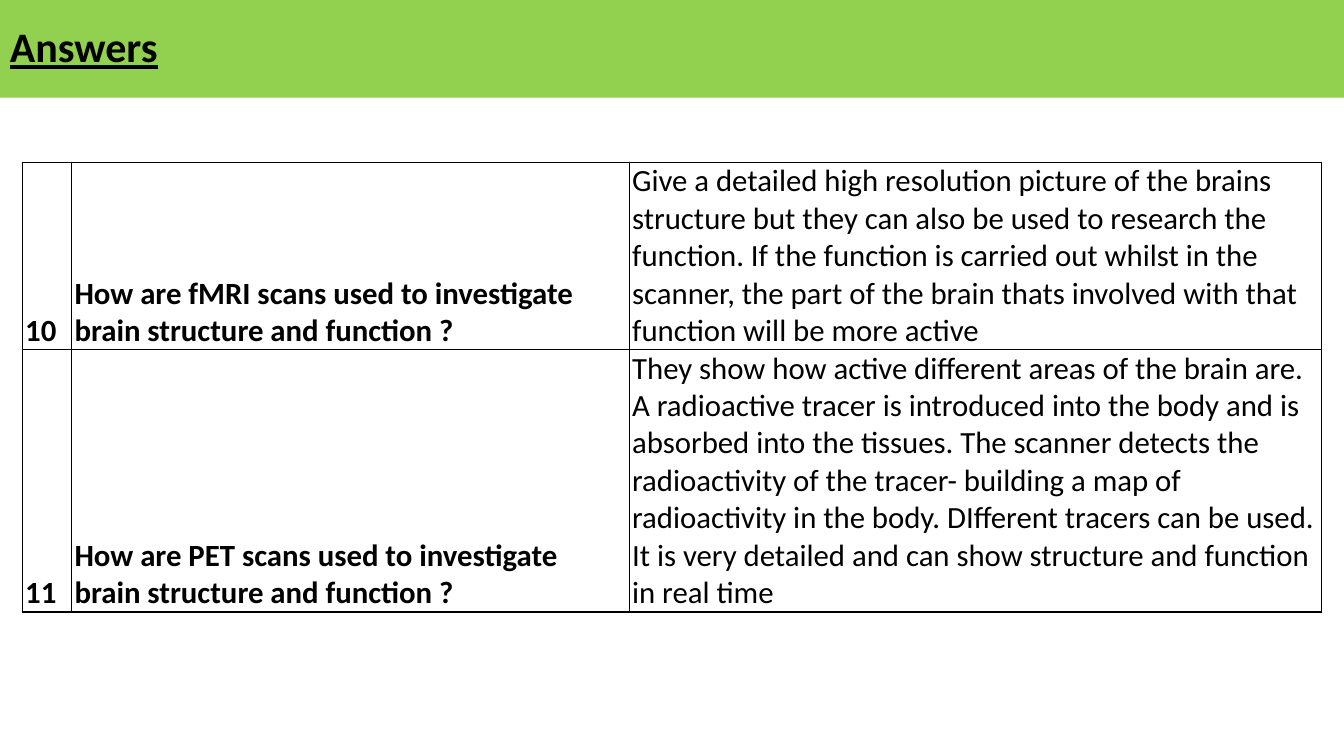
import pptx
import pptx.dml.color
import pptx.enum.shapes
import pptx.enum.text
import pptx.oxml
import pptx.oxml.ns
import pptx.util

Inches = pptx.util.Inches
MIDDLE = pptx.enum.text.MSO_ANCHOR.MIDDLE
BOTTOM = pptx.enum.text.MSO_ANCHOR.BOTTOM


def color(value):
    return pptx.dml.color.RGBColor.from_string(value)


def write(para, text, **format_values):
    span = para.add_run()
    span.text = text
    span.font.name = "Calibri"
    span.font.color.rgb = color("000000")
    for name, value in format_values.items():
        setattr(span.font, name, value)


deck = pptx.Presentation()
deck.slide_width, deck.slide_height = Inches(13.33), Inches(7.5)
page = deck.slides.add_slide(deck.slide_layouts[6])

# Title band
band = page.shapes.add_shape(
    pptx.enum.shapes.MSO_SHAPE.RECTANGLE, 0, 0, deck.slide_width, Inches(0.97))
band.shadow.inherit = False
band.fill.solid()
band.fill.fore_color.rgb = color("92D050")
band.line.fill.background()
band.text_frame.word_wrap = True
band.text_frame.vertical_anchor = MIDDLE
para = band.text_frame.paragraphs[0]
para.alignment = pptx.enum.text.PP_ALIGN.LEFT
para.line_spacing = 0.9
write(para, "Answers", size=pptx.util.Pt(30), bold=True, underline=True)

# Questions and answers
answers = [
    ("10", "How are fMRI scans used to investigate brain structure and function ?",
     "Give a detailed high resolution picture of the brains structure but they can "
     "also be used to research the function. If the function is carried out whilst "
     "in the scanner, the part of the brain thats involved with that function will "
     "be more active"),
    ("11", "How are PET scans used to investigate brain structure and function ?",
     "They show how active different areas of the brain are. A radioactive tracer is "
     "introduced into the body and is absorbed into the tissues. The scanner detects "
     "the radioactivity of the tracer- building a map of radioactivity in the body. "
     "DIfferent tracers can be used. It is very detailed and can show structure and "
     "function in real time"),
]
column_widths = [0.49, 5.53, 6.87]
row_heights = [1.86, 2.6]
table = page.shapes.add_table(
    len(answers), len(column_widths), Inches(0.22), Inches(1.61),
    Inches(sum(column_widths)), Inches(sum(row_heights))).table
table.first_row = table.horz_banding = False
for column, width in zip(table.columns, column_widths):
    column.width = Inches(width)
for row, height in zip(table.rows, row_heights):
    row.height = Inches(height)

cell_format = {
    "vertical_anchor": BOTTOM,
    "margin_left": Inches(0.03), "margin_right": Inches(0.03),
    "margin_top": 0, "margin_bottom": 0,
}
for row, texts in zip(table.rows, answers):
    for index, (cell, text) in enumerate(zip(row.cells, texts)):
        for name, value in cell_format.items():
            setattr(cell, name, value)
        write(cell.text_frame.paragraphs[0], text,
              size=pptx.util.Pt(22), bold=index < 2)

        # Cell borders come before the fill in the cell properties
        properties = cell._tc.get_or_add_tcPr()
        for side in ("lnL", "lnR", "lnT", "lnB"):
            properties.append(pptx.oxml.parse_xml(
                f'<a:{side} {pptx.oxml.ns.nsdecls("a")} w="{pptx.util.Pt(1)}">'
                f'<a:solidFill><a:srgbClr val="000000"/></a:solidFill></a:{side}>'))
        cell.fill.background()

deck.save("out.pptx")
